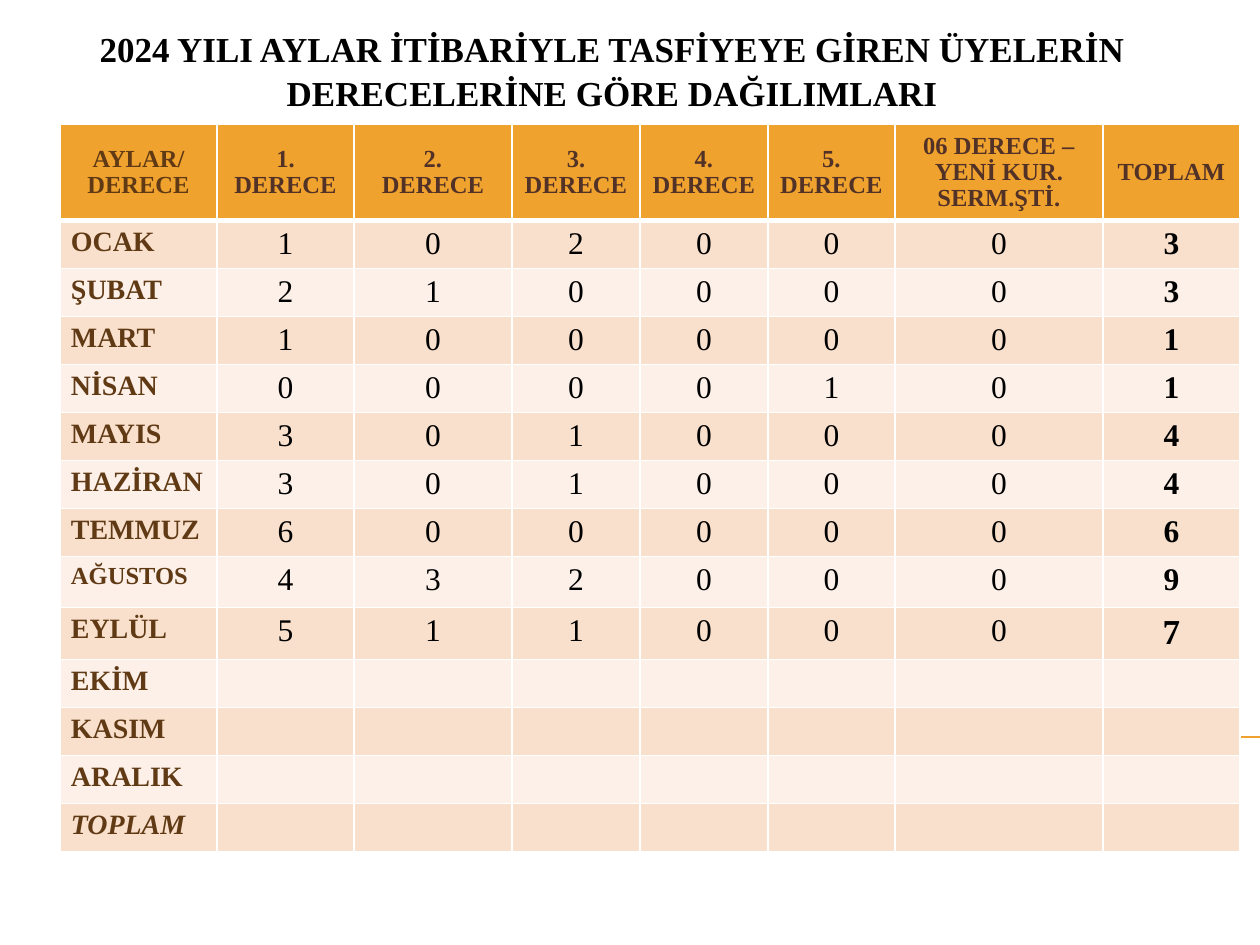
from dataclasses import dataclass
from typing import Any, Optional

from lxml.etree import SubElement
from pptx import Presentation
from pptx.dml.color import RGBColor as Rgb
from pptx.enum.shapes import MSO_CONNECTOR as Connector
from pptx.enum.text import MSO_ANCHOR as Anchor, PP_ALIGN as Align
from pptx.oxml.ns import qn
from pptx.util import Emu, Pt


@dataclass(frozen=True)
class Theme:
    face: str = "Times New Roman"
    ink: str = "000000"
    month_ink: str = "603A14"
    grade_ink: str = "523227"
    accent: str = "F0A22E"
    odd_band: str = "F9E0CD"
    even_band: str = "FCF0E8"
    grid: str = "FFFFFF"
    title_size: int = 20
    header_size: int = 14
    month_size: int = 16
    count_size: int = 18
    rule_width: float = 0.75
    grid_width: int = 1
    header_rule_width: int = 3


@dataclass(frozen=True)
class Month:
    name: str
    counts: tuple[int, ...] = ()
    height: int = 48
    name_size: int = 16
    total_size: int = 18
    italic: bool = False


@dataclass(frozen=True)
class Style:
    size: int
    color: str
    bold: bool = True
    italic: bool = False
    align: Align = Align.CENTER
    spacing: Optional[float] = None


THEME = Theme()
EMU_PER_PX = 914400 / 126
SLIDE_SIZE = (1260, 945)
TITLE_BOX = (29, 20, 1166, 90)
TABLE_ORIGIN = (60, 124)
COLUMN_WIDTHS = (157, 137, 158, 128, 128, 127, 208, 137)
HEADER_HEIGHT = 96
RULE_START, RULE_Y = 71, 737
TITLE = "2024 YILI AYLAR İTİBARİYLE TASFİYEYE GİREN ÜYELERİN DERECELERİNE GÖRE DAĞILIMLARI"
HEADERS = (
    "AYLAR/ DERECE",
    *(f"{grade}.\nDERECE" for grade in (1, 2)),
    *(f"{grade}. DERECE" for grade in (3, 4, 5)),
    "06 DERECE – YENİ KUR. SERM.ŞTİ.",
    "TOPLAM",
)
MONTHS = (
    Month("OCAK", (1, 0, 2, 0, 0, 0, 3)),
    Month("ŞUBAT", (2, 1, 0, 0, 0, 0, 3)),
    Month("MART", (1, 0, 0, 0, 0, 0, 1)),
    Month("NİSAN", (0, 0, 0, 0, 1, 0, 1)),
    Month("MAYIS", (3, 0, 1, 0, 0, 0, 4)),
    Month("HAZİRAN", (3, 0, 1, 0, 0, 0, 4)),
    Month("TEMMUZ", (6, 0, 0, 0, 0, 0, 6)),
    Month("AĞUSTOS", (4, 3, 2, 0, 0, 0, 9), height=51, name_size=14),
    Month("EYLÜL", (5, 1, 1, 0, 0, 0, 7), height=52, total_size=20),
    Month("EKİM"),
    Month("KASIM"),
    Month("ARALIK"),
    Month("TOPLAM", italic=True),
)


def px(length: int) -> Emu:
    return Emu(round(length * EMU_PER_PX))


def apply(target: Any, values: dict[str, Any]) -> None:
    for key, value in values.items():
        setattr(target, key, value)


def write(frame: Any, wording: str, style: Style) -> None:
    frame.text = wording
    for paragraph in frame.paragraphs:
        apply(paragraph, {"alignment": style.align, "line_spacing": style.spacing})
        for run in paragraph.runs:
            apply(run.font, {"name": THEME.face, "size": Pt(style.size),
                             "bold": style.bold, "italic": style.italic})
            run.font.color.rgb = Rgb.from_string(style.color)


def draw_rule(slide: Any) -> None:
    rule = slide.shapes.add_connector(
        Connector.STRAIGHT, px(RULE_START), px(RULE_Y), px(SLIDE_SIZE[0]), px(RULE_Y))
    rule.line.color.rgb = Rgb.from_string(THEME.accent)
    rule.line.width = Pt(THEME.rule_width)
    SubElement(rule._element.spPr, qn("a:effectLst"))


def draw_title(slide: Any) -> None:
    frame = slide.shapes.add_textbox(*map(px, TITLE_BOX)).text_frame
    frame.word_wrap = True
    write(frame, TITLE, Style(THEME.title_size, THEME.ink, spacing=1.04))


def draw_borders(cell: Any, top: int, bottom: int) -> None:
    properties = cell._tc.get_or_add_tcPr()
    widths = {"L": THEME.grid_width, "R": THEME.grid_width, "T": top, "B": bottom}
    for side, width in widths.items():
        line = SubElement(properties, qn(f"a:ln{side}"), w=str(Pt(width)))
        fill = SubElement(line, qn("a:solidFill"))
        SubElement(fill, qn("a:srgbClr"), val=THEME.grid)


def draw_cell(cell: Any, row: int, wording: str, style: Style) -> None:
    thick, thin = THEME.header_rule_width, THEME.grid_width
    draw_borders(cell, thick if row == 1 else thin, thick if row == 0 else thin)
    band = THEME.odd_band if row % 2 else THEME.even_band
    cell.fill.solid()
    cell.fill.fore_color.rgb = Rgb.from_string(band if row else THEME.accent)
    apply(cell, {"margin_left": px(11), "margin_right": px(11),
                 "margin_top": px(6), "margin_bottom": px(2 if row else 6),
                 "vertical_anchor": Anchor.TOP if row else Anchor.MIDDLE})
    if wording:
        write(cell.text_frame, wording, style)


def header_style(column: int) -> Style:
    color = THEME.grade_ink if column else THEME.month_ink
    return Style(THEME.header_size, color, spacing=0.96)


def month_style(month: Month, column: int) -> Style:
    if column == 0:
        return Style(month.name_size, THEME.month_ink,
                     italic=month.italic, align=Align.LEFT)
    is_total = column == len(HEADERS) - 1
    return Style(month.total_size if is_total else THEME.count_size, THEME.ink, bold=is_total)


def draw_table(slide: Any) -> None:
    heights = (HEADER_HEIGHT, *(month.height for month in MONTHS))
    table = slide.shapes.add_table(
        len(heights), len(HEADERS), *map(px, TABLE_ORIGIN),
        px(sum(COLUMN_WIDTHS)), px(sum(heights))).table
    for column, width in zip(table.columns, COLUMN_WIDTHS):
        column.width = px(width)
    for row, height in zip(table.rows, heights):
        row.height = px(height)
    for column, header in enumerate(HEADERS):
        draw_cell(table.cell(0, column), 0, header, header_style(column))
        for row, month in enumerate(MONTHS, start=1):
            entries = (month.name, *map(str, month.counts))
            wording = entries[column] if column < len(entries) else ""
            draw_cell(table.cell(row, column), row, wording, month_style(month, column))


def main() -> None:
    deck = Presentation()
    deck.slide_width, deck.slide_height = map(px, SLIDE_SIZE)
    slide = deck.slides.add_slide(deck.slide_layouts[6])
    draw_rule(slide)
    draw_title(slide)
    draw_table(slide)
    deck.save("out.pptx")


if __name__ == "__main__":
    main()
